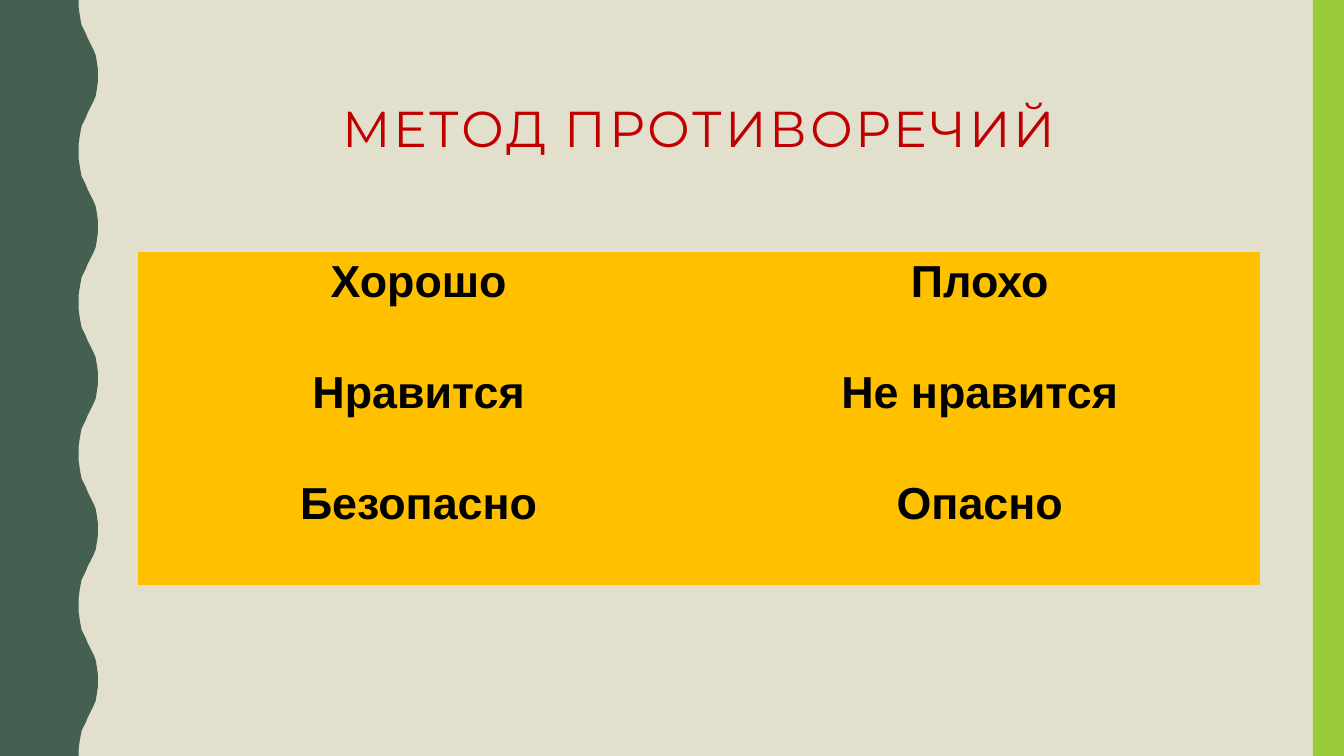
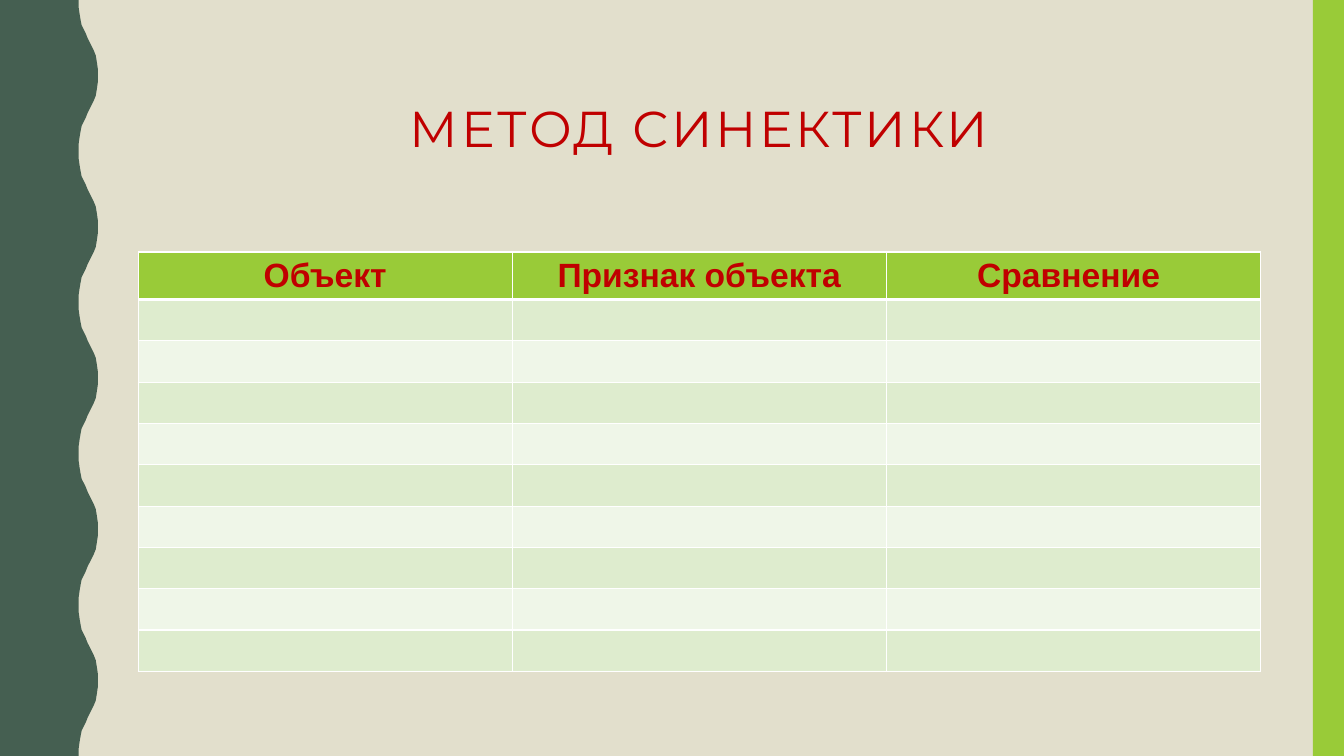
from dataclasses import dataclass

from lxml import etree
from pptx import Presentation
from pptx.dml.color import RGBColor
from pptx.enum import shapes, text
from pptx.oxml import ns
from pptx.util import Inches, Pt


@dataclass(frozen=True)
class Theme:
    paper: str = "E2DFCC"
    pine: str = "455F51"
    lime: str = "99CB38"
    red: str = "C00000"
    gold: str = "FFC000"
    black: str = "000000"
    white: str = "FFFFFF"
    bands: tuple = ("DEECCE", "EFF6E8")
    display: str = "Montserrat"
    body: str = "Arial"
    title: int = 36
    large: int = 32
    head: int = 24


THEME = Theme()
WIDTH, HEIGHT = 13.33, 7.5
LEFT, SPAN = 1.37, 11.13
TITLE = (LEFT, 0.42, SPAN, 1.63)
PLAIN = "{2D5ABB26-0587-4C30-8999-92F81FD0307C}"
CURVE = [(0.78, 0), (0.78, 0.07), (0.79, 0.14), (0.8, 0.2), (0.81, 0.25),
         (0.83, 0.29), (0.85, 0.33), (0.87, 0.38), (0.89, 0.42), (0.91, 0.46),
         (0.93, 0.5), (0.95, 0.55), (0.96, 0.61), (0.97, 0.68)]
PERIOD = 1.5


def paint(fill, color):
    fill.solid()
    fill.fore_color.rgb = RGBColor.from_string(color)


def style(par, face, size, color, bold=False):
    par.alignment = text.PP_ALIGN.CENTER
    font = par.font
    font.name, font.size, font.bold = face, Pt(size), bold
    font.color.rgb = RGBColor.from_string(color)


def wave(slide, box):
    left, top, _, height = box
    cycle = CURVE + [(0.97, PERIOD / 2)]
    cycle += [(x, PERIOD - y) for x, y in reversed(CURVE[1:])]
    edge = [(x, y + PERIOD * turn)
            for turn in range(round(height / PERIOD)) for x, y in cycle]
    edge += [(CURVE[0][0], height), (0, height)]
    pen = slide.shapes.build_freeform(Inches(left), Inches(top))
    pen.add_line_segments([(Inches(left + x), Inches(top + y)) for x, y in edge])
    return pen.convert_to_shape()


def strip(slide, box):
    return slide.shapes.add_shape(shapes.MSO_SHAPE.RECTANGLE, *map(Inches, box))


def frame(layout, slide):
    paint(layout.background.fill, THEME.paper)
    parts = [(wave(slide, (0, 0, 0.97, HEIGHT)), THEME.pine),
             (strip(slide, (WIDTH - 0.31, 0, 0.31, HEIGHT)), THEME.lime)]
    for index, (shape, color) in enumerate(parts):
        shape.shadow.inherit = False
        paint(shape.fill, color)
        shape.line.fill.background()
        shape.element.xpath("./p:nvSpPr/p:cNvPr")[0].set("id", str(20 + index))
        layout.shapes.element.insert(2 + index, shape.element)


def title(slide, words, box):
    shape = slide.shapes.title
    shape.left, shape.top, shape.width, shape.height = map(Inches, box)
    body = shape.text_frame
    body.text = words
    body.word_wrap = True
    body.vertical_anchor = text.MSO_ANCHOR.MIDDLE
    body.margin_top, body.margin_bottom = Inches(0.18), Inches(0.05)
    par = body.paragraphs[0]
    par.line_spacing = 0.9
    style(par, THEME.display, THEME.title, THEME.red)
    par.runs[0].font._element.set("spc", "200")


def border(cell, sides):
    props = cell._tc.get_or_add_tcPr()
    for index, (side, width) in enumerate(sides.items()):
        line = etree.Element(ns.qn(f"a:ln{side}"), w=str(Pt(width)))
        fill = etree.SubElement(line, ns.qn("a:solidFill"))
        etree.SubElement(fill, ns.qn("a:srgbClr"), val=THEME.white)
        props.insert(index, line)


def grid(slide, box, cols, rows):
    left, top, width = box
    item = slide.shapes.add_table(len(rows), cols, Inches(left), Inches(top),
                                  Inches(width), Inches(sum(rows)))
    table = item.table
    table.first_row = table.horz_banding = False
    table._tbl.tblPr.find(ns.qn("a:tableStyleId")).text = PLAIN
    for row, height in zip(table.rows, rows):
        row.height = Inches(height)
    return table


def write(cell, words, size, color):
    cell.text = words
    style(cell.text_frame.paragraphs[0], THEME.body, size, color, True)


def pairs(slide, box, rows):
    table = grid(slide, box, len(rows[0]), [1.1] * len(rows))
    for row, words in zip(table.rows, rows):
        for cell, word in zip(row.cells, words):
            paint(cell.fill, THEME.gold)
            write(cell, word, THEME.large, THEME.black)


def blank(slide, box, heads, count):
    table = grid(slide, box, len(heads), [0.47] + [0.41] * count)
    for index, row in enumerate(table.rows):
        color = THEME.bands[(index - 1) % 2] if index else THEME.lime
        sides = {"L": 1, "R": 1, "T": 3 if index == 1 else 1,
                 "B": 1 if index else 3}
        for cell in row.cells:
            paint(cell.fill, color)
            border(cell, sides)
    for cell, word in zip(table.rows[0].cells, heads):
        write(cell, word, THEME.head, THEME.red)


def main():
    deck = Presentation()
    deck.slide_width, deck.slide_height = Inches(WIDTH), Inches(HEIGHT)
    layout = deck.slide_layouts[5]
    first, second = [deck.slides.add_slide(layout) for _ in range(2)]
    frame(layout, first)
    box = (LEFT, 2.5, SPAN)

    title(first, "МЕТОД ПРОТИВОРЕЧИЙ", TITLE)
    pairs(first, box, [("Хорошо", "Плохо"), ("Нравится", "Не нравится"),
                       ("Безопасно", "Опасно")])

    title(second, "МЕТОД СИНЕКТИКИ", TITLE)
    blank(second, box, ("Объект", "Признак объекта", "Сравнение "), 9)
    deck.save("out.pptx")


if __name__ == "__main__":
    main()
